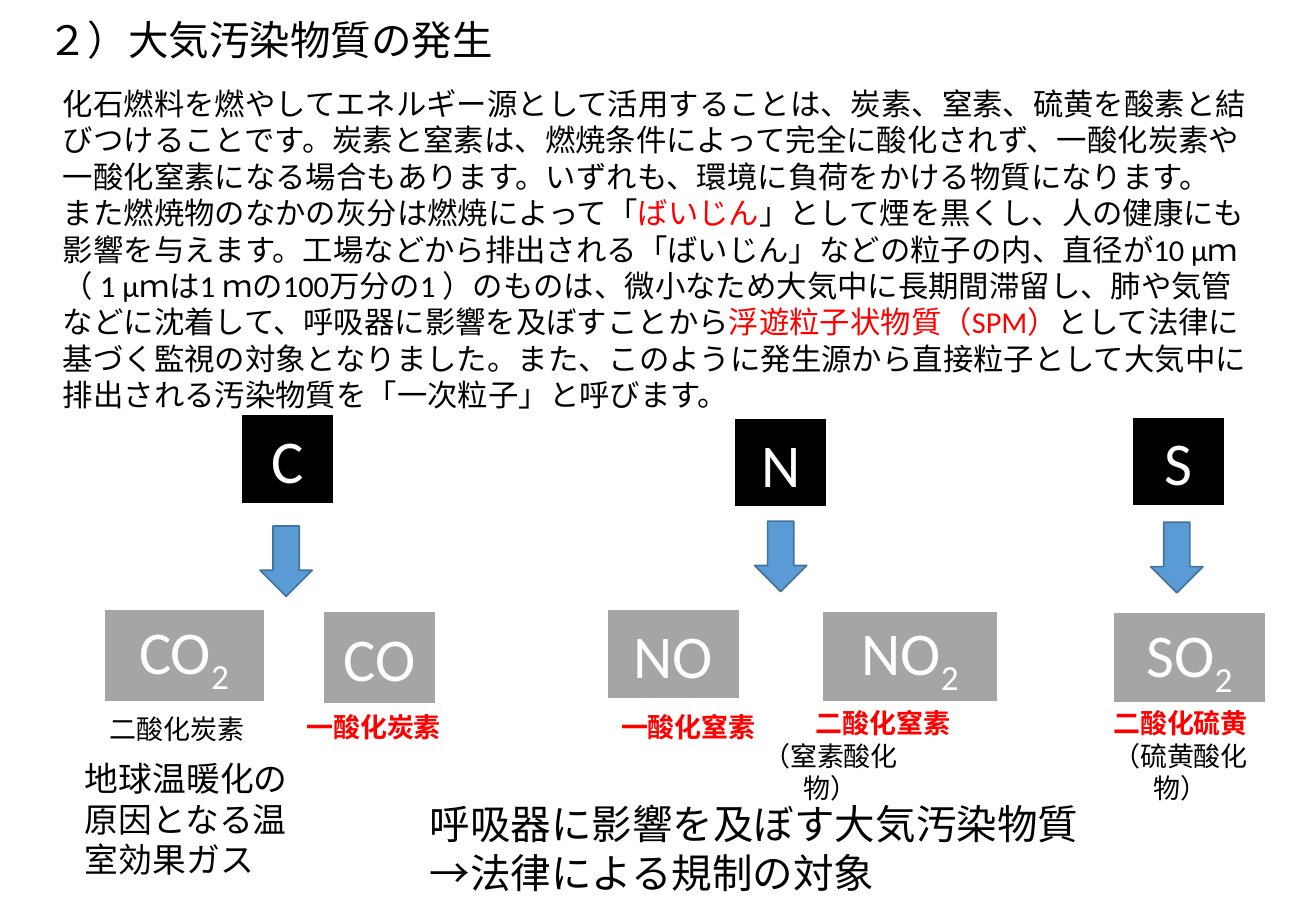
from dataclasses import dataclass

from pptx import Presentation
from pptx.dml.color import RGBColor
from pptx.enum import shapes, text
from pptx.util import Inches, Pt


@dataclass(frozen=True)
class Theme:
    font: str = "Calibri"
    ink: str = "000000"
    accent: str = "FF0000"
    paper: str = "FFFFFF"
    oxide: str = "A5A5A5"
    arrow: str = "5B9BD5"
    arrow_edge: str = "43739E"
    heading: int = 24
    remark: int = 20
    body: int = 18
    caption: int = 16
    formula: int = 36


THEME = Theme()
ELEMENT_SIZE = (0.77, 0.74)
ARROW_SIZE = (0.43, 0.58)
CAPTION_HEIGHT = 0.37


@dataclass(frozen=True)
class Span:
    words: str
    color: str | None = None
    bold: bool = False
    subscript: bool = False


@dataclass(frozen=True)
class Box:
    left: float
    top: float
    width: float
    height: float

    def lengths(self) -> tuple:
        return tuple(Inches(n) for n in (self.left, self.top, self.width, self.height))


@dataclass(frozen=True)
class Element:
    symbol: str
    left: float
    top: float
    arrow_left: float
    arrow_top: float


@dataclass(frozen=True)
class Oxide:
    formula: str
    count: str
    box: Box


@dataclass(frozen=True)
class Note:
    box: Box
    size: int
    paragraphs: list[list[Span]]
    centered: bool = False


def caption(left: float, top: float, width: float, *lines: Span) -> Note:
    box = Box(left, top, width, CAPTION_HEIGHT)
    return Note(box, THEME.caption, [[line] for line in lines], True)


def pollutant(name: str) -> Span:
    return Span(name, THEME.accent, bold=True)


# Content
TITLE = Note(Box(0.29, 0.07, 7.73, 0.5), THEME.heading, [[Span("２）大気汚染物質の発生")]])

ELEMENTS = [
    Element("C", 1.98, 3.41, 2.14, 4.33),
    Element("N", 6.04, 3.44, 6.21, 4.29),
    Element("S", 9.31, 3.43, 9.47, 4.3),
]

OXIDES = [
    Oxide("CO", "2", Box(0.85, 5.01, 1.33, 0.77)),
    Oxide("CO", "", Box(2.66, 5.03, 0.93, 0.77)),
    Oxide("NO", "", Box(4.99, 5.01, 1.1, 0.75)),
    Oxide("NO", "2", Box(6.76, 5.03, 1.46, 0.75)),
    Oxide("SO", "2", Box(9.16, 5.04, 1.26, 0.75)),
]

NOTES = [
    Note(Box(0.42, 0.65, 10, 2.83), THEME.body, [
        [Span("化石燃料を燃やしてエネルギー源として活用することは、炭素、窒素、硫黄を酸素と"
              "結びつけることです。炭素と窒素は、燃焼条件によって完全に酸化されず、一酸化炭素や"
              "一酸化窒素になる場合もあります。いずれも、環境に負荷をかける物質になります。")],
        [Span("また燃焼物のなかの灰分は燃焼によって「"),
         Span("ばいじん", THEME.accent),
         Span("」として煙を黒くし、人の健康にも影響を与えます。工場などから排出される"
              "「ばいじん」などの粒子の内、直径が10 μｍ（ 1 μｍは1 ｍの100万分の1 ）のものは、"
              "微小なため大気中に長期間滞留し、肺や気管などに沈着して、"
              "呼吸器に影響を及ぼすことから"),
         Span("浮遊粒子状物質（SPM）", THEME.accent),
         Span("として法律に基づく監視の対象となりました。また、このように発生源から"
              "直接粒子として大気中に排出される汚染物質を「一次粒子」と呼びます。")],
    ]),
    Note(Box(0.6, 6.19, 1.87, 1.11), THEME.remark,
         [[Span("地球温暖化の原因となる温室効果ガス")]]),
    Note(Box(3.44, 6.53, 5.57, 0.91), THEME.heading,
         [[Span("呼吸器に影響を及ぼす大気汚染物質")], [Span("→法律による規制の対象")]]),
    caption(0.7, 5.82, 1.51, Span("二酸化炭素")),
    caption(2.32, 5.8, 1.51, pollutant("一酸化炭素")),
    caption(4.91, 5.8, 1.51, pollutant("一酸化窒素")),
    caption(6.51, 5.77, 1.51, pollutant("二酸化窒素")),
    caption(6.01, 6.04, 1.65, Span("（窒素酸化物）")),
    caption(8.89, 5.77, 1.65, pollutant("二酸化硫黄"), Span("（硫黄酸化物）")),
]


def write(frame, paragraphs: list[list[Span]], size: int, color: str, centered: bool) -> None:
    frame.word_wrap = True
    for index, spans in enumerate(paragraphs):
        paragraph = frame.add_paragraph() if index else frame.paragraphs[0]
        paragraph.alignment = text.PP_ALIGN.CENTER if centered else text.PP_ALIGN.LEFT
        paragraph.font.name = THEME.font
        paragraph.font.size = Pt(size)
        paragraph.font.color.rgb = RGBColor.from_string(color)
        for span in spans:
            run = paragraph.add_run()
            run.text = span.words
            if span.color:
                run.font.color.rgb = RGBColor.from_string(span.color)
            if span.bold:
                run.font.bold = True
            if span.subscript:
                run.font._element.set("baseline", "-25000")


def add_note(slide, note: Note) -> None:
    frame = slide.shapes.add_textbox(*note.box.lengths()).text_frame
    write(frame, note.paragraphs, note.size, THEME.ink, note.centered)


def add_block(slide, kind, box: Box, fill: str, edge: str, weight: float):
    block = slide.shapes.add_shape(kind, *box.lengths())
    block.shadow.inherit = False
    block.fill.solid()
    block.fill.fore_color.rgb = RGBColor.from_string(fill)
    block.line.color.rgb = RGBColor.from_string(edge)
    block.line.width = Pt(weight)
    return block


def add_formula(slide, box: Box, fill: str, spans: list[Span]) -> None:
    tile = add_block(slide, shapes.MSO_SHAPE.RECTANGLE, box, fill, THEME.paper, 1.5)
    tile.text_frame.vertical_anchor = text.MSO_ANCHOR.MIDDLE
    write(tile.text_frame, [spans], THEME.formula, THEME.paper, True)


def add_title(slide, note: Note) -> None:
    title = slide.shapes.title
    title.left, title.top, title.width, title.height = note.box.lengths()
    title.text_frame.vertical_anchor = text.MSO_ANCHOR.TOP
    title.text_frame.auto_size = text.MSO_AUTO_SIZE.NONE
    write(title.text_frame, note.paragraphs, note.size, THEME.ink, note.centered)


def main() -> None:
    deck = Presentation()
    deck.slide_width, deck.slide_height = Inches(10.83), Inches(7.5)
    slide = deck.slides.add_slide(deck.slide_layouts[5])
    add_title(slide, TITLE)

    # Elements and the arrows below them
    for element in ELEMENTS:
        add_formula(slide, Box(element.left, element.top, *ELEMENT_SIZE), THEME.ink,
                    [Span(element.symbol)])
        add_block(slide, shapes.MSO_SHAPE.DOWN_ARROW,
                  Box(element.arrow_left, element.arrow_top, *ARROW_SIZE),
                  THEME.arrow, THEME.arrow_edge, 1)

    # Oxides
    for oxide in OXIDES:
        spans = [Span(oxide.formula)]
        if oxide.count:
            spans.append(Span(oxide.count, subscript=True))
        add_formula(slide, oxide.box, THEME.oxide, spans)

    # Explanations and captions
    for note in NOTES:
        add_note(slide, note)

    deck.save("out.pptx")


if __name__ == "__main__":
    main()
